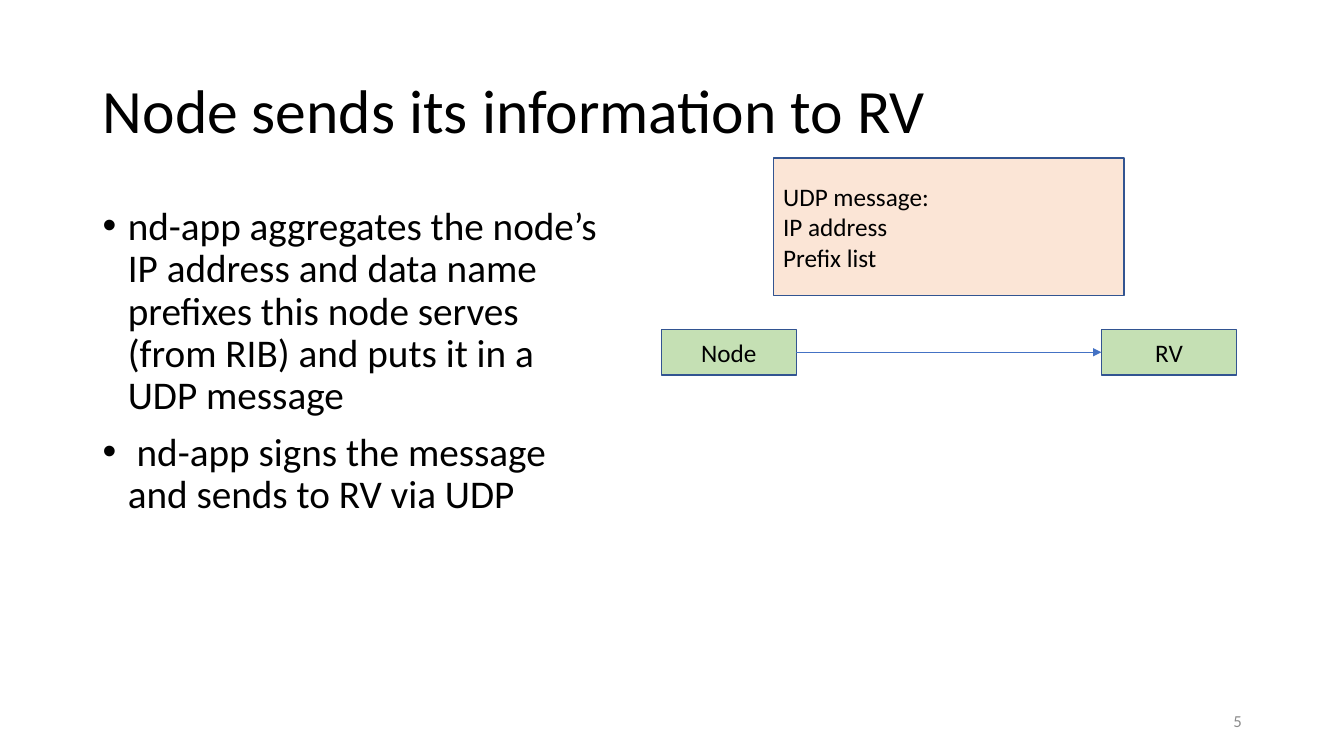
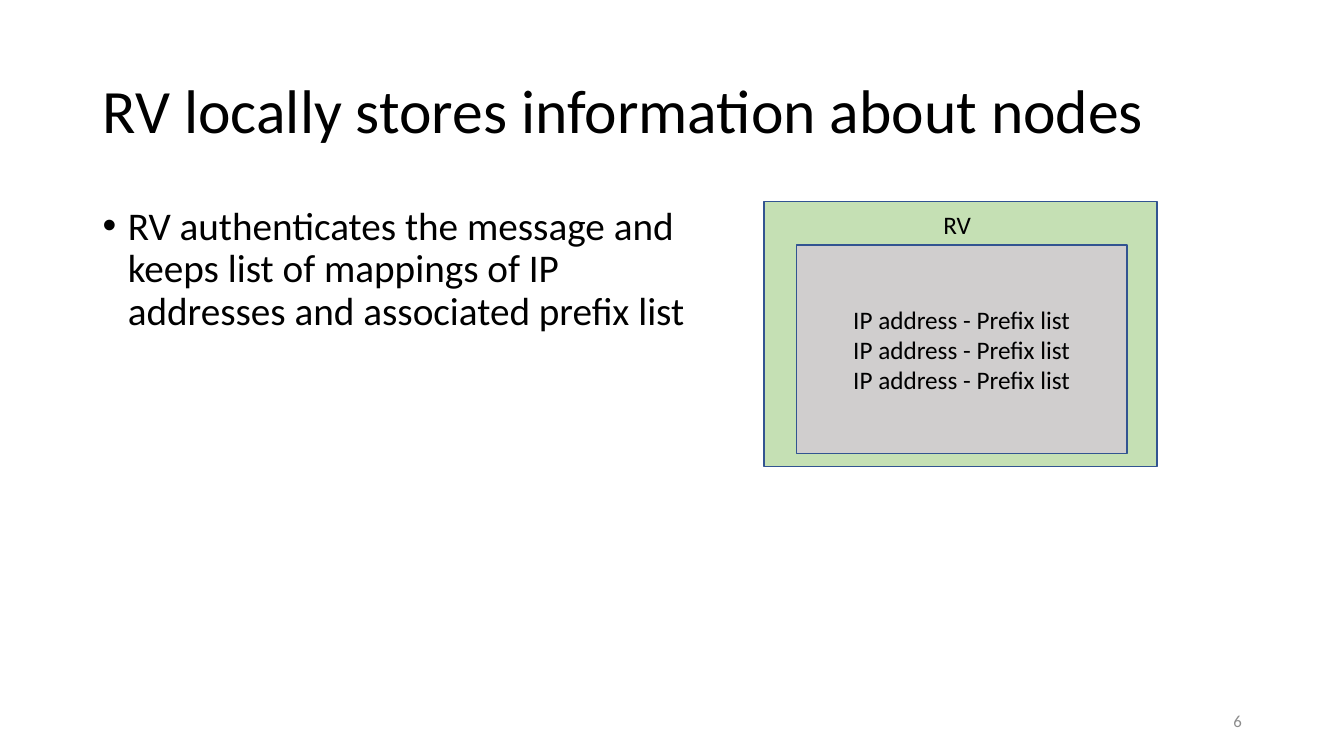
from dataclasses import dataclass

from lxml import etree
from pptx import Presentation
from pptx.dml.color import RGBColor
from pptx.enum.shapes import MSO_CONNECTOR, MSO_SHAPE
from pptx.enum.text import MSO_ANCHOR, MSO_AUTO_SIZE, PP_ALIGN
from pptx.oxml.ns import qn
from pptx.shapes.autoshape import Shape
from pptx.slide import Slide
from pptx.text.text import TextFrame
from pptx.util import Emu, Inches, Pt

RECTANGLE = MSO_SHAPE.RECTANGLE
STRAIGHT = MSO_CONNECTOR.STRAIGHT
LEFT, CENTER, RIGHT = PP_ALIGN.LEFT, PP_ALIGN.CENTER, PP_ALIGN.RIGHT
TOP, MIDDLE = MSO_ANCHOR.TOP, MSO_ANCHOR.MIDDLE
LEFT_SIDE, RIGHT_SIDE = 1, 3

BLACK = RGBColor(0x00, 0x00, 0x00)
GRAY = RGBColor(0x8C, 0x8C, 0x8C)
GREEN = RGBColor(0xC5, 0xE0, 0xB4)
PEACH = RGBColor(0xFB, 0xE5, 0xD6)
SILVER = RGBColor(0xD0, 0xCE, 0xCE)
OUTLINE = RGBColor(0x32, 0x54, 0x91)
ARROW_BLUE = RGBColor(0x44, 0x72, 0xC4)

FONT = "Calibri"
SLIDE_WIDTH, SLIDE_HEIGHT = Inches(13.33), Inches(7.5)
TITLE_ONLY_LAYOUT = 5


@dataclass(frozen=True)
class Area:
    """A rectangle in percent of the slide's width and height."""
    left: float
    top: float
    width: float
    height: float

    def emu(self) -> tuple[Emu, Emu, Emu, Emu]:
        return (Emu(int(SLIDE_WIDTH * self.left / 100)),
                Emu(int(SLIDE_HEIGHT * self.top / 100)),
                Emu(int(SLIDE_WIDTH * self.width / 100)),
                Emu(int(SLIDE_HEIGHT * self.height / 100)))


@dataclass(frozen=True)
class TextStyle:
    size: int
    align: PP_ALIGN = LEFT
    anchor: MSO_ANCHOR = TOP
    color: RGBColor = BLACK
    line_spacing: float = 1.0
    space_before: int = 0


@dataclass(frozen=True)
class Box:
    area: Area
    fill: RGBColor
    lines: tuple[str, ...] = ()
    align: PP_ALIGN = CENTER


TITLE_AREA = Area(6.9, 5.33, 86.25, 19.33)
NUMBER_AREA = Area(70.65, 92.67, 22.5, 5.33)
BODY_TOP, BODY_HEIGHT = 26.67, 63.47

TITLE_STYLE = TextStyle(44, anchor=MIDDLE, line_spacing=0.9)
BULLET_STYLE = TextStyle(28, line_spacing=0.9, space_before=10)
NUMBER_STYLE = TextStyle(12, RIGHT, MIDDLE, GRAY)
LABEL_STYLE = TextStyle(18)

NODE = Box(Area(49.2, 43.6, 10.05, 6), GREEN, ("Node",))
RV = Box(Area(81.95, 43.6, 10.05, 6), GREEN, ("RV",))
MESSAGE = Box(Area(57.53, 20.93, 26.1, 18.13), PEACH,
              ("UDP message:", "IP address", "Prefix list"), LEFT)
RV_STORE = Box(Area(56.85, 26.67, 29.25, 35.07), GREEN)
MAPPINGS = Box(Area(59.25, 32.4, 24.6, 27.6), SILVER,
               ("IP address - Prefix list",) * 3)
RV_LABEL_AREA = Area(69.45, 27.07, 7.2, 5.33)


def write(frame: TextFrame, lines: tuple[str, ...], style: TextStyle) -> None:
    frame.word_wrap = True
    frame.auto_size = MSO_AUTO_SIZE.NONE
    frame.vertical_anchor = style.anchor
    frame.text = "\n".join(lines)
    for paragraph in frame.paragraphs:
        paragraph.alignment = style.align
        paragraph.line_spacing = style.line_spacing
        paragraph.space_before = Pt(style.space_before)
        paragraph.font.name = FONT
        paragraph.font.size = Pt(style.size)
        paragraph.font.color.rgb = style.color


def add_text(slide: Slide, area: Area, lines: tuple[str, ...],
             style: TextStyle) -> TextFrame:
    frame = slide.shapes.add_textbox(*area.emu()).text_frame
    write(frame, lines, style)
    return frame


def add_bullets(slide: Slide, width: float, lines: tuple[str, ...]) -> None:
    area = Area(TITLE_AREA.left, BODY_TOP, width, BODY_HEIGHT)
    indent = Inches(0.25)
    for paragraph in add_text(slide, area, lines, BULLET_STYLE).paragraphs:
        properties = paragraph._p.get_or_add_pPr()
        properties.set("marL", str(indent))
        properties.set("indent", str(-indent))
        bullet_font = etree.Element(qn("a:buFont"), typeface="Arial")
        bullet = etree.Element(qn("a:buChar"), char="•")
        spacing = properties.find(qn("a:spcBef"))
        spacing.addnext(bullet_font)
        bullet_font.addnext(bullet)


def add_box(slide: Slide, box: Box) -> Shape:
    shape = slide.shapes.add_shape(RECTANGLE, *box.area.emu())
    shape.shadow.inherit = False
    shape.fill.solid()
    shape.fill.fore_color.rgb = box.fill
    shape.line.color.rgb = OUTLINE
    shape.line.width = Pt(1)
    if box.lines:
        write(shape.text_frame, box.lines, TextStyle(18, box.align, MIDDLE))
    return shape


def add_arrow(slide: Slide, source: Shape, target: Shape) -> None:
    """Join the source's right side to the target's left side."""
    arrow = slide.shapes.add_connector(STRAIGHT, 0, 0, 0, 0)
    arrow.begin_connect(source, RIGHT_SIDE)
    arrow.end_connect(target, LEFT_SIDE)
    arrow.line.color.rgb = ARROW_BLUE
    arrow.line.width = Pt(0.5)
    etree.SubElement(arrow.line._get_or_add_ln(), qn("a:tailEnd"), type="triangle")
    etree.SubElement(arrow._element.spPr, qn("a:effectLst"))


def add_titled_slide(prs: Presentation, title: str, number: int) -> Slide:
    slide = prs.slides.add_slide(prs.slide_layouts[TITLE_ONLY_LAYOUT])
    heading = slide.shapes.title
    heading.left, heading.top, heading.width, heading.height = TITLE_AREA.emu()
    write(heading.text_frame, (title,), TITLE_STYLE)
    add_text(slide, NUMBER_AREA, (str(number),), NUMBER_STYLE)
    return slide


def build_sending_slide(prs: Presentation) -> None:
    slide = add_titled_slide(prs, "Node sends its information to RV", 5)
    add_bullets(slide, 38.85, (
        "nd-app aggregates the node’s IP address and data name prefixes "
        "this node serves (from RIB) and puts it in a UDP message",
        " nd-app signs the message and sends to RV via UDP",
    ))
    node, rv = add_box(slide, NODE), add_box(slide, RV)
    add_box(slide, MESSAGE)
    add_arrow(slide, node, rv)


def build_storing_slide(prs: Presentation) -> None:
    slide = add_titled_slide(prs, "RV locally stores information about nodes", 6)
    add_bullets(slide, 45.23, (
        "RV authenticates the message and keeps list of mappings of "
        "IP addresses and associated prefix list",
    ))
    add_box(slide, RV_STORE)
    add_box(slide, MAPPINGS)
    add_text(slide, RV_LABEL_AREA, ("RV",), LABEL_STYLE)


def main() -> None:
    prs = Presentation()
    prs.slide_width, prs.slide_height = SLIDE_WIDTH, SLIDE_HEIGHT
    build_sending_slide(prs)
    build_storing_slide(prs)
    prs.save("out.pptx")


if __name__ == "__main__":
    main()
